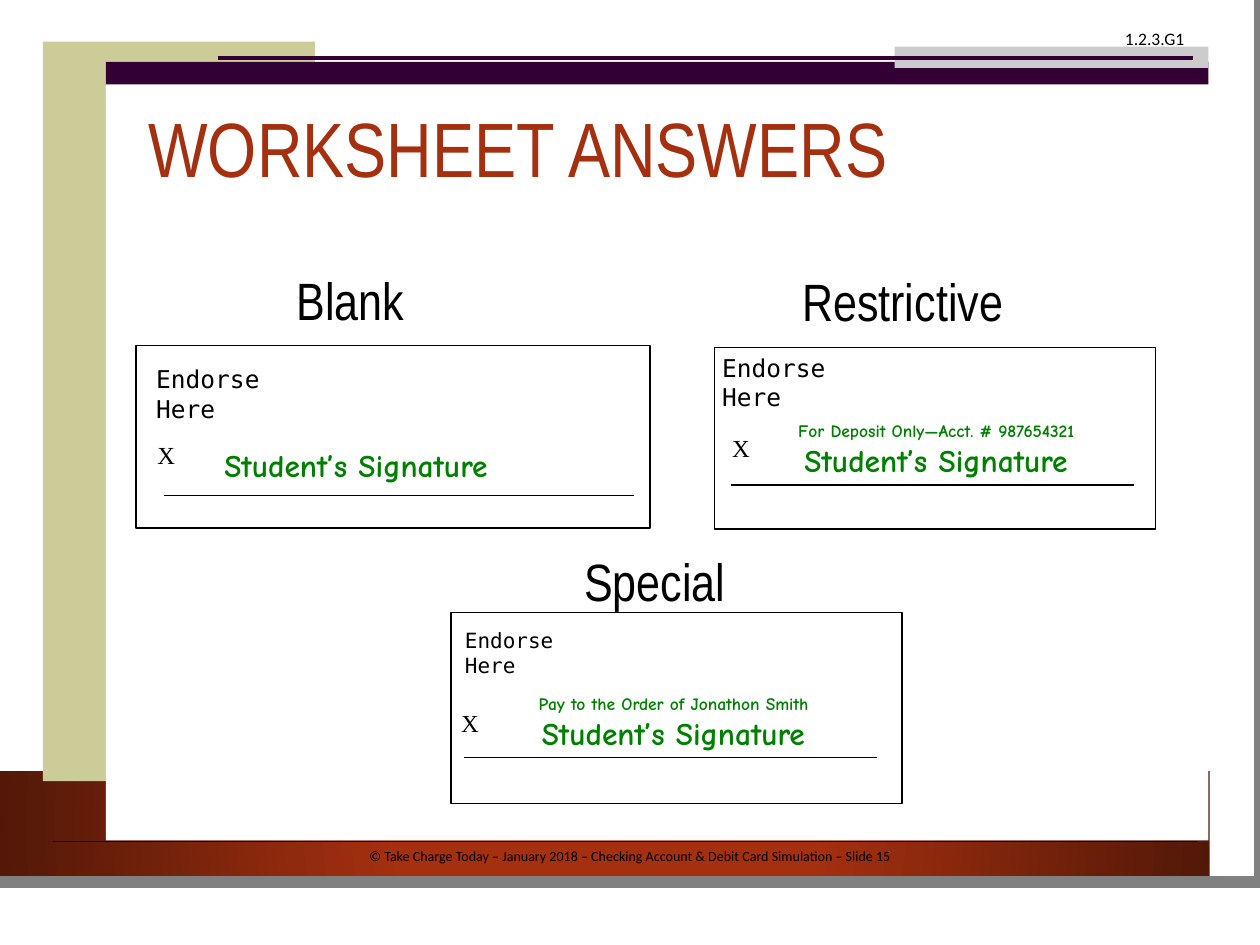
from lxml import etree
from pptx import Presentation, util as u
from pptx.dml.color import RGBColor
from pptx.enum import shapes, text
from pptx.oxml.ns import qn

BLACK, GREEN, RUST, PLUM, WHITE = "000000", "008000", "A5300F", "330033", "FFFFFF"
FOOTER = "© Take Charge Today – January 2018 – Checking Account & Debit Card Simulation – Slide 15"
PANELS = [
    (0.34, 0.33, 2.16, 5.87, "CCCC99"),
    (0.84, 0.49, 8.75, 6.18, WHITE),
    (0.84, 0.49, 8.75, 0.18, PLUM),
    (7.1, 0.37, 2.49, 0.17, "CCCCCC"),
]
SIGNATURE = ("Student’s Signature", 18)
ENDORSEMENTS = [
    dict(heading=("Blank", 1.57, 2.08, 2.42), card=(1.08, 2.74, 4.08, 1.45),
         prompt=(1.2, 2.85, 1.47, 14), mark=(1.21, 3.45), rule=(1.3, 5.03, 3.93),
         signed=(1.74, 3.5, 3.33), align="left", entries=[SIGNATURE]),
    dict(heading=("Restrictive", 5.79, 2.09, 2.75), card=(5.67, 2.76, 3.5, 1.44),
         prompt=(5.69, 2.76, 1.48, 14), mark=(5.77, 3.4), rule=(5.8, 9, 3.85),
         signed=(5.98, 3.29, 2.9), align="center",
         entries=[("For Deposit Only—Acct. # 987654321", 10), SIGNATURE]),
    dict(heading=("Special", 3.82, 4.31, 2.75), card=(3.58, 4.86, 3.58, 1.52),
         prompt=(3.65, 4.94, 1.27, 12), mark=(3.62, 5.58), rule=(3.68, 6.96, 6.01),
         signed=(3.86, 5.46, 2.97), align="center",
         entries=[("Pay to the Order of Jonathon Smith", 10), SIGNATURE]),
]

deck = Presentation()
deck.slide_width, deck.slide_height = u.Inches(10), u.Inches(7.5)
slide = deck.slides.add_slide(deck.slide_layouts[6])


def rgb(value):
    return RGBColor.from_string(value)


def add_block(left, top, width, height, fill=None, line=None):
    block = slide.shapes.add_shape(shapes.MSO_SHAPE.RECTANGLE, *map(u.Inches, (left, top, width, height)))
    block.shadow.inherit = False
    if fill:
        block.fill.solid()
        block.fill.fore_color.rgb = rgb(fill)
    else:
        block.fill.background()
    if line:
        block.line.color.rgb = rgb(line)
        block.line.width = u.Pt(0.75)
    else:
        block.line.fill.background()
    return block


def add_rule(start, end, y, color=BLACK, weight=0.75):
    rule = slide.shapes.add_connector(shapes.MSO_CONNECTOR.STRAIGHT, *map(u.Inches, (start, y, end, y)))
    rule.line.color.rgb = rgb(color)
    rule.line.width = u.Pt(weight)
    etree.SubElement(rule._element.spPr, qn("a:effectLst"))


def add_text(entries, left, top, width, height, font="Calibri", color=BLACK, bold=False,
             align="left", anchor="top", inset=None, spacing=None):
    box = slide.shapes.add_textbox(*map(u.Inches, (left, top, width, height)))
    frame = box.text_frame
    frame.word_wrap = True
    frame.vertical_anchor = getattr(text.MSO_ANCHOR, anchor.upper())
    if inset is not None:
        frame.margin_left = frame.margin_right = u.Inches(inset)
        frame.margin_top = frame.margin_bottom = u.Inches(inset)
    for index, (words, size) in enumerate(entries):
        paragraph = frame.add_paragraph() if index else frame.paragraphs[0]
        paragraph.alignment = getattr(text.PP_ALIGN, align.upper())
        if spacing:
            paragraph.line_spacing = spacing
        run = paragraph.add_run()
        run.text = words
        run.font.name, run.font.size, run.font.bold = font, u.Pt(size), bold
        run.font.color.rgb = rgb(color)


def add_radial_fill(block, inner, outer):
    block.fill.gradient()
    for stop, (position, color) in zip(block.fill.gradient_stops, (inner, outer)):
        stop.position = position
        stop.color.rgb = rgb(color)
    gradient = block._element.spPr.find(qn("a:gradFill"))
    gradient.remove(gradient.find(qn("a:lin")))
    circle = etree.SubElement(gradient, qn("a:path"), {"path": "circle"})
    etree.SubElement(circle, qn("a:fillToRect"), dict.fromkeys("ltrb", "50000"))


def add_frame():
    add_block(0, 0, 9.83, 7.27, WHITE)
    band = add_block(0, 6.12, 9.6, 0.85, RUST)
    add_radial_fill(band, (0.34, RUST), (1, "521808"))
    builder = slide.shapes.build_freeform(9.62, 0, scale=u.Inches(1))
    builder.add_line_segments([(9.64, 7.02), (-0.02, 7.01)], close=False)
    edge = builder.convert_to_shape()
    edge.shadow.inherit = False
    edge.fill.background()
    edge.line.color.rgb = rgb("808080")
    edge.line.width = u.Pt(6.5)
    add_text([(FOOTER, 8)], 0.42, 6.68, 9.17, 0.24, align="center")
    for *place, color in PANELS:
        add_block(*place, color)
    add_rule(1.73, 9.47, 0.46, PLUM, 2)
    add_rule(0.42, 9.5, 6.68)
    add_text([("1.2.3.G1", 10)], 8.83, 0.17, 0.75, 0.27)


def add_endorsement(heading, card, prompt, mark, rule, signed, align, entries):
    title, *heading_place = heading
    *prompt_place, prompt_size = prompt
    add_text([(title, 30)], *heading_place, 0.6, font="Arial Narrow", align="center")
    add_block(*card, line=BLACK)
    add_text(entries, *signed, 0.61, font="Comic Neue", color=GREEN, bold=True, align=align, inset=0.04)
    add_text([("X", 14)], *mark, 0.44, 0.5, font="Times New Roman", inset=0.04)
    add_rule(*rule)
    add_text([("Endorse Here", prompt_size)], *prompt_place, 0.25, font="DejaVu Sans Mono", inset=0.04)


add_frame()
add_text([("WORKSHEET ANSWERS", 44)], 1.08, 0.58, 8.53, 1.26, font="Arial Narrow", color=RUST,
         anchor="middle", spacing=0.9)
for endorsement in ENDORSEMENTS:
    add_endorsement(**endorsement)
deck.save("out.pptx")
